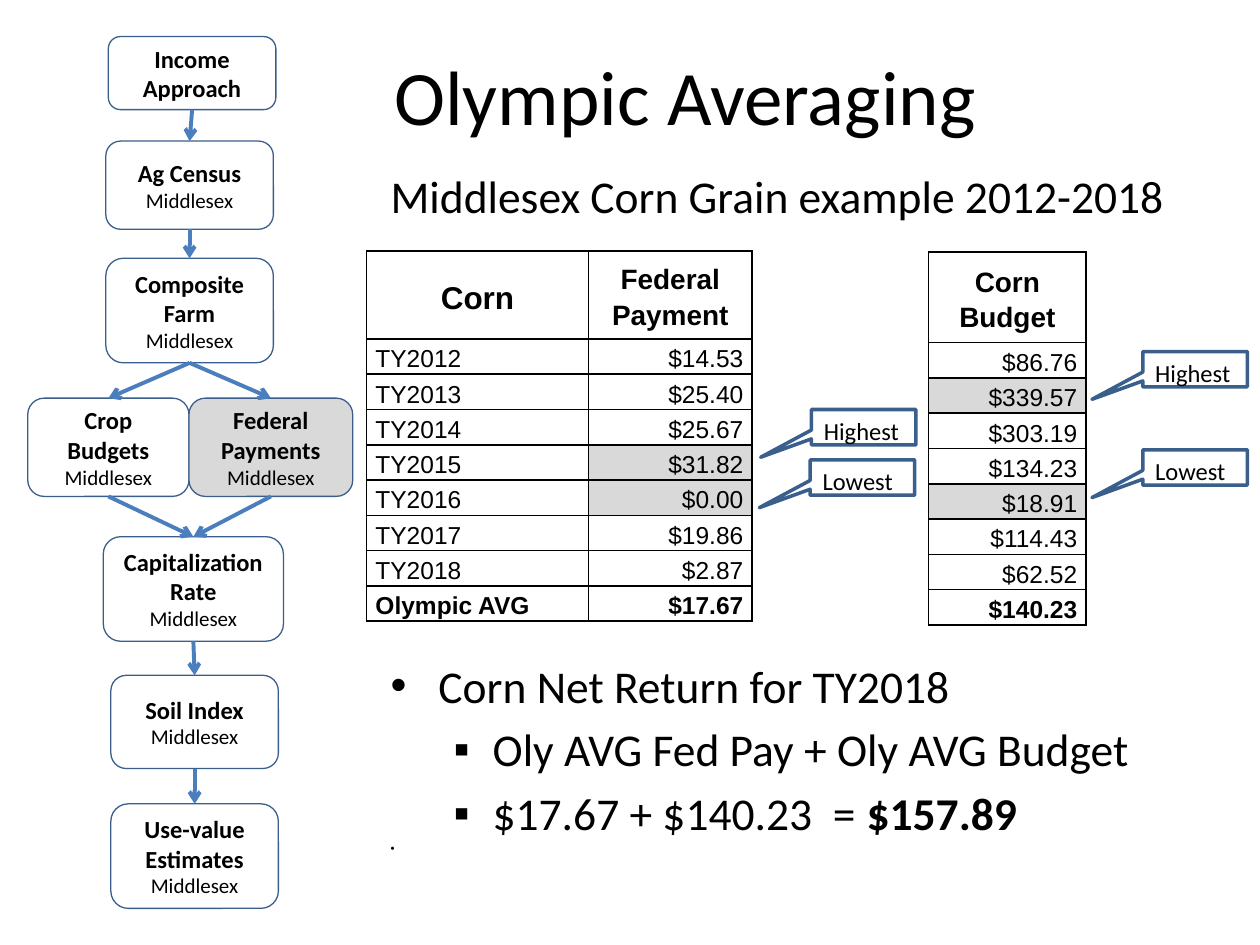
from lxml.etree import SubElement
from pptx import Presentation
from pptx.dml.color import RGBColor
from pptx.enum.shapes import MSO_CONNECTOR, MSO_SHAPE
from pptx.enum.text import MSO_ANCHOR, MSO_AUTO_SIZE, PP_ALIGN
from pptx.oxml.ns import qn
from pptx.util import Inches, Pt

COLORS = {"text": "000000", "outline": "3A5F8C", "arrow": "4B7EBC",
          "highlight": "D9D9D9", "border": "000000"}
TOP, BOTTOM = 0, 2

# name: (heading, left, top, width, height)
STEPS = {
    "income": ("Income Approach", 0.86, 0.29, 1.33, 0.58),
    "census": ("Ag Census", 0.84, 1.12, 1.33, 0.7),
    "farm": ("Composite Farm", 0.84, 2.05, 1.33, 0.83),
    "budgets": ("Crop Budgets", 0.22, 3.16, 1.28, 0.78),
    "payments": ("Federal Payments", 1.5, 3.16, 1.3, 0.78),
    "rate": ("Capitalization Rate", 0.82, 4.26, 1.43, 0.83),
    "soil": ("Soil Index", 0.88, 5.36, 1.33, 0.74),
    "estimates": ("Use-value Estimates", 0.88, 6.38, 1.33, 0.83),
}
FLOW = [("income", "census"), ("census", "farm"), ("farm", "budgets"),
        ("farm", "payments"), ("budgets", "rate"), ("payments", "rate"),
        ("rate", "soil"), ("soil", "estimates")]

PAYMENT_ROWS = [
    ("Corn", "Federal Payment"),
    ("TY2012", "$14.53"), ("TY2013", "$25.40"), ("TY2014", "$25.67"),
    ("TY2015", "$31.82"), ("TY2016", "$0.00"), ("TY2017", "$19.86"),
    ("TY2018", "$2.87"), ("Olympic AVG", "$17.67"),
]
BUDGET_ROWS = [("Corn Budget",), ("$86.76",), ("$339.57",), ("$303.19",), ("$134.23",),
               ("$18.91",), ("$114.43",), ("$62.52",), ("$140.23",)]
EXTREMES = {"$31.82", "$0.00", "$339.57", "$18.91"}

CALLOUTS = [("Lowest", 6.43, 3.65), ("Highest", 6.44, 3.25),
            ("Highest", 9.07, 2.79), ("Lowest", 9.07, 3.57)]


def color(name):
    return RGBColor.from_string(COLORS[name])


def set_font(font, size, bold=False, name="Calibri"):
    font.name, font.size, font.bold = name, Pt(size), bold
    font.color.rgb = color("text")


def place(shape, left, top, width, height):
    shape.left, shape.top = Inches(left), Inches(top)
    shape.width, shape.height = Inches(width), Inches(height)


def add_outlined(page, preset, bounds, line_width):
    box = page.shapes.add_shape(preset, *map(Inches, bounds))
    box.shadow.inherit = False
    box.fill.background()
    box.line.color.rgb = color("outline")
    box.line.width = Pt(line_width)
    box.text_frame.word_wrap = True
    return box


def add_step(page, heading, *bounds):
    box = add_outlined(page, MSO_SHAPE.FLOWCHART_ALTERNATE_PROCESS, bounds, 0.75)
    frame = box.text_frame
    frame.vertical_anchor = MSO_ANCHOR.MIDDLE
    frame.text = heading if heading == "Income Approach" else f"{heading}\nMiddlesex"
    for index, para in enumerate(frame.paragraphs):
        para.alignment = PP_ALIGN.CENTER
        set_font(para.font, 12 if index else 14, bold=index == 0)
    return box


def add_arrow(page, start, end):
    arrow = page.shapes.add_connector(MSO_CONNECTOR.STRAIGHT, 0, 0, 0, 0)
    arrow.begin_connect(start, BOTTOM)
    arrow.end_connect(end, TOP)
    arrow.line.color.rgb = color("arrow")
    arrow.line.width = Pt(2.25)
    SubElement(arrow.line._get_or_add_ln(), qn("a:tailEnd"), type="arrow")
    SubElement(arrow._element.spPr, qn("a:effectLst"))


def add_callout(page, label, left, top):
    box = add_outlined(page, MSO_SHAPE.RECTANGULAR_CALLOUT, (left, top, 0.83, 0.28), 2)
    box.adjustments[0], box.adjustments[1] = -0.986, 0.855
    box.text_frame.vertical_anchor = MSO_ANCHOR.TOP
    para = box.text_frame.paragraphs[0]
    para.text = label
    para.alignment = PP_ALIGN.LEFT
    set_font(para.font, 14)


def set_borders(cell):
    properties = cell._tc.get_or_add_tcPr()
    for side in ("lnL", "lnR", "lnT", "lnB"):
        line = SubElement(properties, qn(f"a:{side}"), w=str(Pt(1)))
        fill = SubElement(line, qn("a:solidFill"))
        SubElement(fill, qn("a:srgbClr"), val=COLORS["border"])


def fill_cell(cell, text, size, bold, alignment):
    set_borders(cell)
    if text in EXTREMES:
        cell.fill.solid()
        cell.fill.fore_color.rgb = color("highlight")
    else:
        cell.fill.background()
    cell.margin_left = cell.margin_right = Inches(0.07)
    cell.margin_top, cell.margin_bottom = Inches(0.01), 0
    cell.vertical_anchor = MSO_ANCHOR.MIDDLE
    para = cell.text_frame.paragraphs[0]
    para.text = text
    para.alignment = alignment
    para.line_spacing = 1.15
    set_font(para.font, size, bold, "Arial")


def add_value_table(page, left, top, widths, heights, rows):
    table = page.shapes.add_table(len(rows), len(widths), Inches(left), Inches(top),
                                  Inches(sum(widths)), Inches(sum(heights))).table
    table.first_row = table.horz_banding = False
    for column, width in zip(table.columns, widths):
        column.width = Inches(width)
    for r, (values, height) in enumerate(zip(rows, heights)):
        table.rows[r].height = Inches(height)
        for c, text in enumerate(values):
            size = 14 if r else 18 if text == "Corn" else 16
            alignment = (PP_ALIGN.CENTER if r == 0 else
                         PP_ALIGN.RIGHT if text.startswith("$") else PP_ALIGN.LEFT)
            fill_cell(table.cell(r, c), text, size, r in (0, len(rows) - 1), alignment)


def set_bullet(para, character=None, margin=0, hanging=0):
    properties = para._p.get_or_add_pPr()
    properties.set("marL", str(Inches(margin)))
    properties.set("indent", str(-Inches(hanging)))
    if character:
        SubElement(properties, qn("a:buFont"), typeface="Arial")
        SubElement(properties, qn("a:buChar"), char=character)
    else:
        SubElement(properties, qn("a:buNone"))


def write_title(title):
    place(title, 3.03, 0.38, 5.57, 0.75)
    title.text_frame.auto_size = MSO_AUTO_SIZE.NONE
    para = title.text_frame.paragraphs[0]
    para.text = "Olympic Averaging"
    para.alignment = PP_ALIGN.LEFT
    set_font(para.font, 44)


def write_example(body):
    place(body, 3, 1.28, 6.67, 0.55)
    body.text_frame.auto_size = MSO_AUTO_SIZE.NONE
    para = body.text_frame.paragraphs[0]
    para.text = "Middlesex Corn Grain example 2012-2018"
    set_font(para.font, 26)
    set_bullet(para)


def write_net_return(body):
    place(body, 3, 5.17, 6.67, 1.49)
    frame = body.text_frame
    frame.auto_size = MSO_AUTO_SIZE.NONE
    frame.text = ("Corn Net Return for TY2018\nOly AVG Fed Pay + Oly AVG Budget\n"
                  "$17.67 + $140.23  = \n ")
    sizes, levels = (26, 26, 26, 6.5), (0, 1, 1, 0)
    for para, size, level in zip(frame.paragraphs, sizes, levels):
        para.level = level
        set_font(para.font, size)
        para.runs[0].font.size = Pt(size)
        set_bullet(para, *(("▪", 0.81, 0.31) if level else ("•", 0.38, 0.38)))
    total = frame.paragraphs[2].add_run()
    total.text = "$157.89"
    set_font(total.font, 26, bold=True)


def main():
    deck = Presentation()
    deck.slide_width, deck.slide_height = Inches(10), Inches(7.5)
    page = deck.slides.add_slide(deck.slide_layouts.get_by_name("Two Content"))
    title, example, net_return = page.placeholders
    write_title(title)
    write_example(example)
    write_net_return(net_return)

    boxes = {name: add_step(page, *step) for name, step in STEPS.items()}
    boxes["payments"].fill.solid()
    boxes["payments"].fill.fore_color.rgb = color("highlight")
    for start, end in FLOW:
        add_arrow(page, boxes[start], boxes[end])

    add_value_table(page, 2.91, 1.99, [1.76, 1.3], [0.7] + [0.28] * 8, PAYMENT_ROWS)
    add_value_table(page, 7.37, 2, [1.25], [0.72] + [0.28] * 8, BUDGET_ROWS)
    for callout in CALLOUTS:
        add_callout(page, *callout)
    deck.save("out.pptx")


if __name__ == "__main__":
    main()
